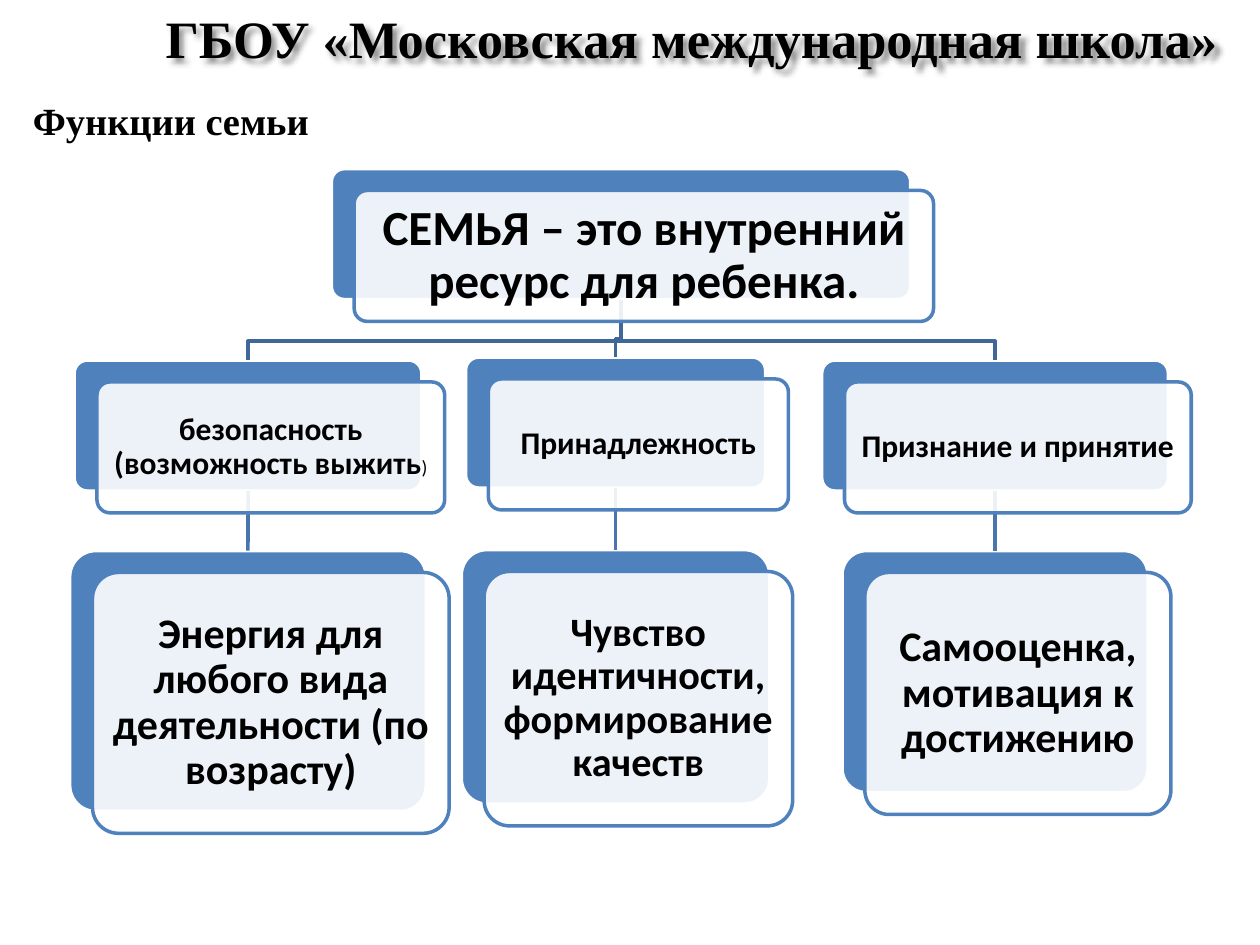
from dataclasses import dataclass
from typing import Any

from lxml import etree
from pptx import Presentation
from pptx.dml.color import RGBColor
from pptx.enum.shapes import MSO_CONNECTOR, MSO_SHAPE
from pptx.enum.text import MSO_ANCHOR, PP_ALIGN
from pptx.oxml.ns import qn
from pptx.util import Cm, Pt

STRAIGHT = MSO_CONNECTOR.STRAIGHT
ROUNDED = MSO_SHAPE.ROUNDED_RECTANGLE
TOP, MIDDLE = MSO_ANCHOR.TOP, MSO_ANCHOR.MIDDLE
LEFT, CENTER = PP_ALIGN.LEFT, PP_ALIGN.CENTER
BOTTOM_SITE, TOP_SITE = 2, 0


@dataclass(frozen=True)
class Theme:
    ink: RGBColor = RGBColor(0x00, 0x00, 0x00)
    paper: RGBColor = RGBColor(0xFF, 0xFF, 0xFF)
    accent: RGBColor = RGBColor(0x4F, 0x81, 0xBD)
    root_link: RGBColor = RGBColor(0x3F, 0x67, 0x97)
    result_link: RGBColor = RGBColor(0x48, 0x75, 0xAC)
    serif: str = "Times New Roman"
    sans: str = "Calibri"
    school_size: float = 30
    title_size: float = 22
    root_size: float = 28
    function_size: float = 18
    note_size: float = 11
    result_size: float = 24
    tight_result_size: float = 23
    line_width: float = 2
    face_opacity: int = 90
    shadow_opacity: int = 43


THEME = Theme()


@dataclass(frozen=True)
class Span:
    text: str
    size: float
    bold: bool = True


@dataclass(frozen=True)
class Card:
    """A node of the tree; lengths are centimetres, measured on its rear plate."""
    center: float
    top: float
    width: float
    height: float
    inset: float
    spans: tuple[Span, ...]

    @property
    def bottom(self) -> float:
        return self.top + self.height


CARD_HEIGHT = 2.64
FACE_SHIFT = (0.46, 0.44)
BEND_GAP = 0.38
CORNER = 0.1


def function_card(center: float, top: float, width: float, *spans: Span) -> Card:
    return Card(center, top, width, CARD_HEIGHT, 0.18, spans)


def result_card(center: float, top: float, width: float, height: float,
                text: str, size: float = THEME.result_size) -> Card:
    return Card(center, top, width, height, 0.18, (Span(text, size),))


ROOT = Card(12.52, 3.4, 11.68, CARD_HEIGHT, 0.3,
            (Span("СЕМЬЯ – это внутренний ресурс для ребенка.", THEME.root_size),))
BRANCHES = [
    (function_card(5, 7.26, 7.01,
                   Span("безопасность (возможность выжить", THEME.function_size),
                   Span(")", THEME.note_size, bold=False)),
     result_card(5, 11.1, 7.19, 5.26,
                 "Энергия для любого вида деятельности (по возрасту)")),
    (function_card(12.41, 7.2, 6.05, Span("Принадлежность", THEME.function_size)),
     result_card(12.41, 11.08, 6.22, 5.13,
                 "Чувство идентичности, формирование качеств",
                 THEME.tight_result_size)),
    (function_card(20.06, 7.26, 6.99,
                   Span("Признание и принятие", THEME.function_size)),
     result_card(20.06, 11.1, 6.17, 4.88, "Самооценка, мотивация к достижению")),
]


def apply_format(target: Any, values: dict[str, Any]) -> None:
    for name, value in values.items():
        setattr(target, name, value)


def write(box: Any, spans: tuple[Span, ...], font: str, align: Any,
          anchor: Any, spacing: float = 1, inset: float | None = None) -> None:
    frame = box.text_frame
    apply_format(frame, {"word_wrap": True, "vertical_anchor": anchor})
    if inset is not None:
        sides = ("margin_left", "margin_top", "margin_right", "margin_bottom")
        apply_format(frame, dict.fromkeys(sides, Cm(inset)))
    para = frame.paragraphs[0]
    apply_format(para, {"alignment": align, "line_spacing": spacing})
    for span in spans:
        run = para.add_run()
        run.text = span.text
        apply_format(run.font, {"name": font, "size": Pt(span.size), "bold": span.bold})
        run.font.color.rgb = THEME.ink


def set_alpha(color: Any, percent: int) -> None:
    etree.SubElement(color, qn("a:alpha"), val=str(percent * 1000))


def add_soft_shadow(box: Any) -> None:
    """Shade the text of an unfilled box."""
    effects = etree.SubElement(box._element.spPr, qn("a:effectLst"))
    shadow = etree.SubElement(effects, qn("a:outerShdw"), blurRad=str(Pt(3)),
                              dist=str(Pt(3)), dir="2700000", algn="tl")
    color = etree.SubElement(shadow, qn("a:srgbClr"), val=str(THEME.ink))
    set_alpha(color, THEME.shadow_opacity)


def style_line(line: Any, color: RGBColor) -> None:
    line.color.rgb = color
    line.width = Pt(THEME.line_width)


def add_plate(page: Any, card: Card, shift: tuple[float, float],
              fill: RGBColor, border: RGBColor) -> Any:
    plate = page.shapes.add_shape(
        ROUNDED, Cm(card.center - card.width / 2 + shift[0]), Cm(card.top + shift[1]),
        Cm(card.width), Cm(card.height))
    plate.adjustments[0] = CORNER
    plate.shadow.inherit = False
    plate.fill.solid()
    plate.fill.fore_color.rgb = fill
    style_line(plate.line, border)
    return plate


def add_rear(page: Any, card: Card) -> Any:
    return add_plate(page, card, (0, 0), THEME.accent, THEME.paper)


def add_face(page: Any, card: Card) -> None:
    """Add the translucent front plate that carries the card's text."""
    face = add_plate(page, card, FACE_SHIFT, THEME.paper, THEME.accent)
    set_alpha(face._element.spPr.find(qn("a:solidFill"))[0], THEME.face_opacity)
    write(face, card.spans, THEME.sans, CENTER, MIDDLE, spacing=0.9, inset=card.inset)


def add_elbow(page: Any, parent: Card, child: Card) -> None:
    bend = child.top - BEND_GAP
    builder = page.shapes.build_freeform(Cm(parent.center), Cm(parent.bottom))
    points = [(parent.center, bend), (child.center, bend), (child.center, child.top)]
    builder.add_line_segments([(Cm(x), Cm(y)) for x, y in points], close=False)
    elbow = builder.convert_to_shape()
    elbow.shadow.inherit = False
    elbow.fill.background()
    style_line(elbow.line, THEME.root_link)


def add_drop(page: Any, upper: Any, lower: Any) -> None:
    drop = page.shapes.add_connector(STRAIGHT, 0, 0, 0, 0)
    drop.begin_connect(upper, BOTTOM_SITE)
    drop.end_connect(lower, TOP_SITE)
    style_line(drop.line, THEME.result_link)
    etree.SubElement(drop._element.spPr, qn("a:effectLst"))


def add_headings(page: Any) -> None:
    title = page.shapes.title
    apply_format(title, {"left": Cm(0.41), "top": Cm(1.73),
                         "width": Cm(18), "height": Cm(1.4)})
    write(title, (Span("Функции семьи", THEME.title_size),), THEME.serif, LEFT, MIDDLE)
    school = page.shapes.add_textbox(Cm(2.97), Cm(0), Cm(21.95), Cm(2.82))
    write(school, (Span("ГБОУ «Московская международная школа»", THEME.school_size),),
          THEME.serif, CENTER, TOP)
    add_soft_shadow(school)


def add_tree(page: Any) -> None:
    add_rear(page, ROOT)
    for function, result in BRANCHES:
        add_drop(page, add_rear(page, function), add_rear(page, result))
        add_elbow(page, ROOT, function)
    for card in [ROOT, *(card for branch in BRANCHES for card in branch)]:
        add_face(page, card)


def main() -> None:
    deck = Presentation()
    apply_format(deck, {"slide_width": Cm(25.4), "slide_height": Cm(19.05)})
    page = deck.slides.add_slide(deck.slide_layouts.get_by_name("Title Only"))
    add_headings(page)
    add_tree(page)
    deck.save("out.pptx")


if __name__ == "__main__":
    main()
